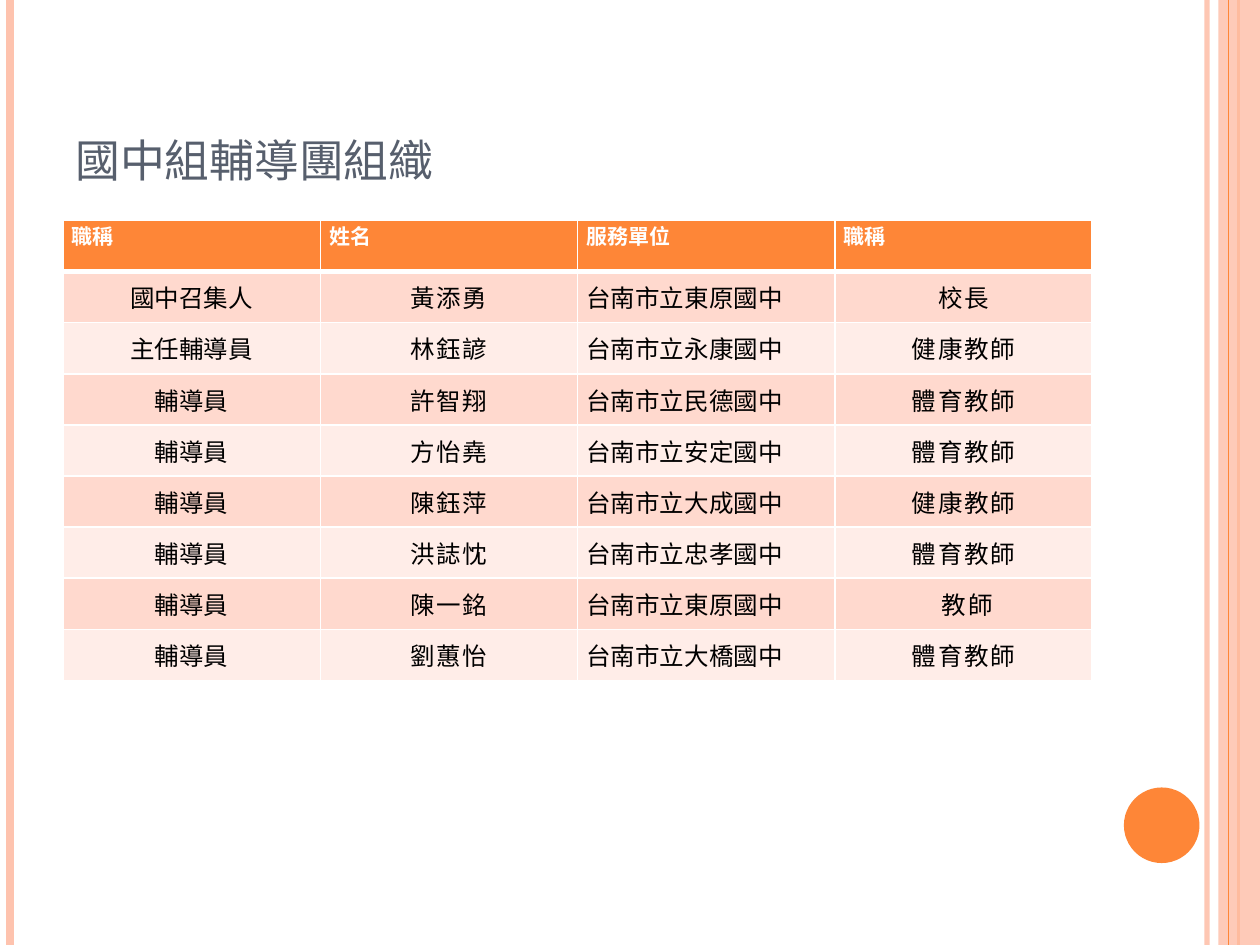
from dataclasses import dataclass

from lxml.etree import SubElement
from pptx import Presentation
from pptx.dml.color import RGBColor as RGB
from pptx.enum.shapes import MSO_CONNECTOR as CONN, MSO_SHAPE as SHAPE
from pptx.enum.text import MSO_ANCHOR as ANCHOR, PP_ALIGN as ALIGN
from pptx.oxml.ns import qn
from pptx.util import Inches, Pt


@dataclass(frozen=True)
class Theme:
    accent: str = "FE8637"
    pale: str = "FEC3AE"
    title: str = "575F6D"
    ink: str = "000000"
    white: str = "FFFFFF"
    bands: tuple = ("FFD9CE", "FFEDE8")
    cjk: str = "Noto Sans CJK SC"
    latin: str = "Times New Roman"
    title_size: int = 32
    head_size: int = 12
    body_size: int = 14


T = Theme()
W, H = Inches(10), Inches(7.5)
LEFT, WIDTH = 0.05, 0.817
INSETS = {"margin_left": Inches(0.07), "margin_right": Inches(0.07),
          "margin_top": 0, "margin_bottom": 0}
HEAD = ("職稱", "姓名", "服務單位", "職稱")
MEMBERS = (
    ("國中召集人", "黃添勇", "東原", "校長"),
    ("主任輔導員", "林鈺諺", "永康", "健康教師"),
    ("輔導員", "許智翔", "民德", "體育教師"),
    ("輔導員", "方怡堯", "安定", "體育教師"),
    ("輔導員", "陳鈺萍", "大成", "健康教師"),
    ("輔導員", "洪誌忱", "忠孝", "體育教師"),
    ("輔導員", "陳一銘", "東原", " 教師"),
    ("輔導員", "劉蕙怡", "大橋", "體育教師"),
)
ALIGNS = (ALIGN.CENTER, ALIGN.CENTER, ALIGN.LEFT, ALIGN.CENTER)
SPACING = (0, 1, 0, 1)


def apply(obj, values):
    for name, value in values.items():
        setattr(obj, name, value)


def box(x, y, w, h):
    return int(W * x), int(H * y), int(W * w), int(H * h)


def paint(fill, color, alpha=100):
    fill.solid()
    fill.fore_color.rgb = RGB.from_string(color)
    if alpha < 100:
        clr = fill._xPr.find(".//" + qn("a:srgbClr"))
        SubElement(clr, qn("a:alpha"), val=str(alpha * 1000))


def add_rule(slide, x, color, width, alpha=100):
    ln = slide.shapes.add_connector(CONN.STRAIGHT, int(W * x), 0, int(W * x), H)
    ln.line.width = Pt(width)
    paint(ln.line.fill, color, alpha)
    SubElement(ln._element.spPr, qn("a:effectLst"))


def add_solid(slide, kind, area, color, alpha=100):
    sp = slide.shapes.add_shape(kind, *box(*area))
    sp.shadow.inherit = False
    sp.line.fill.background()
    paint(sp.fill, color, alpha)


def add_text(p, text, color, font, attrs):
    r = p.add_run()
    r.text = text
    apply(r.font, font)
    r.font.color.rgb = RGB.from_string(color)
    rpr = r._r.get_or_add_rPr()
    for name, value in attrs.items():
        rpr.set(name, value)
    SubElement(rpr, qn("a:ea"), typeface=T.cjk)


def add_title(slide, text):
    tf = slide.shapes.add_textbox(*box(LEFT, 0.04, WIDTH, 1 / 6)).text_frame
    apply(tf, {"word_wrap": True, "vertical_anchor": ANCHOR.BOTTOM})
    font = {"size": Pt(T.title_size), "name": T.cjk}
    add_text(tf.paragraphs[0], text, T.title, font, {"cap": "small"})


def add_borders(cell, bottom):
    tc_pr = cell._tc.get_or_add_tcPr()
    for side, width in zip("LRTB", (1, 1, 1, bottom)):
        ln = SubElement(tc_pr, qn("a:ln" + side), w=str(Pt(width)))
        fill = SubElement(ln, qn("a:solidFill"))
        SubElement(fill, qn("a:srgbClr"), val=T.white)


def fill_cell(cell, text, row, col):
    head = row == 0
    apply(cell, INSETS)
    cell.vertical_anchor = ANCHOR.TOP if head else ANCHOR.MIDDLE
    add_borders(cell, 3 if head else 1)
    paint(cell.fill, T.accent if head else T.bands[(row - 1) % 2])
    p = cell.text_frame.paragraphs[0]
    p.alignment = ALIGN.JUSTIFY if head else ALIGNS[col]
    font = {"size": Pt(T.head_size if head else T.body_size),
            "bold": head, "name": T.latin}
    spacing = 0 if head else SPACING[col]
    add_text(p, text, T.white if head else T.ink, font, {"spc": str(spacing * 100)})


def add_roster(slide):
    rows = [HEAD] + [(role, name, f"台南市立{school}國中", post)
                     for role, name, school, post in MEMBERS]
    area = box(LEFT, 1.75 / 7.5, WIDTH, 3.65 / 7.5)
    table = slide.shapes.add_table(len(rows), len(HEAD), *area).table
    table.horz_banding = False
    for i, row in enumerate(rows):
        for j, text in enumerate(row):
            fill_cell(table.cell(i, j), text, i, j)


def main():
    prs = Presentation()
    apply(prs, {"slide_width": W, "slide_height": H})
    slide = prs.slides.add_slide(prs.slide_layouts[6])
    add_rule(slide, 0.958, T.pale, 3, 93)
    add_rule(slide, 0.008, T.pale, 4.5)
    add_rule(slide, 0.983, T.accent, 1.5)
    add_solid(slide, SHAPE.RECTANGLE, (0.967, 0, 0.033, 1), T.pale, 87)
    add_rule(slide, 0.975, T.accent, 0.75)
    add_solid(slide, SHAPE.OVAL, (0.892, 6.25 / 7.5, 0.06, 0.08), T.accent)
    add_title(slide, "國中組輔導團組織")
    add_roster(slide)
    prs.save("out.pptx")


if __name__ == "__main__":
    main()
